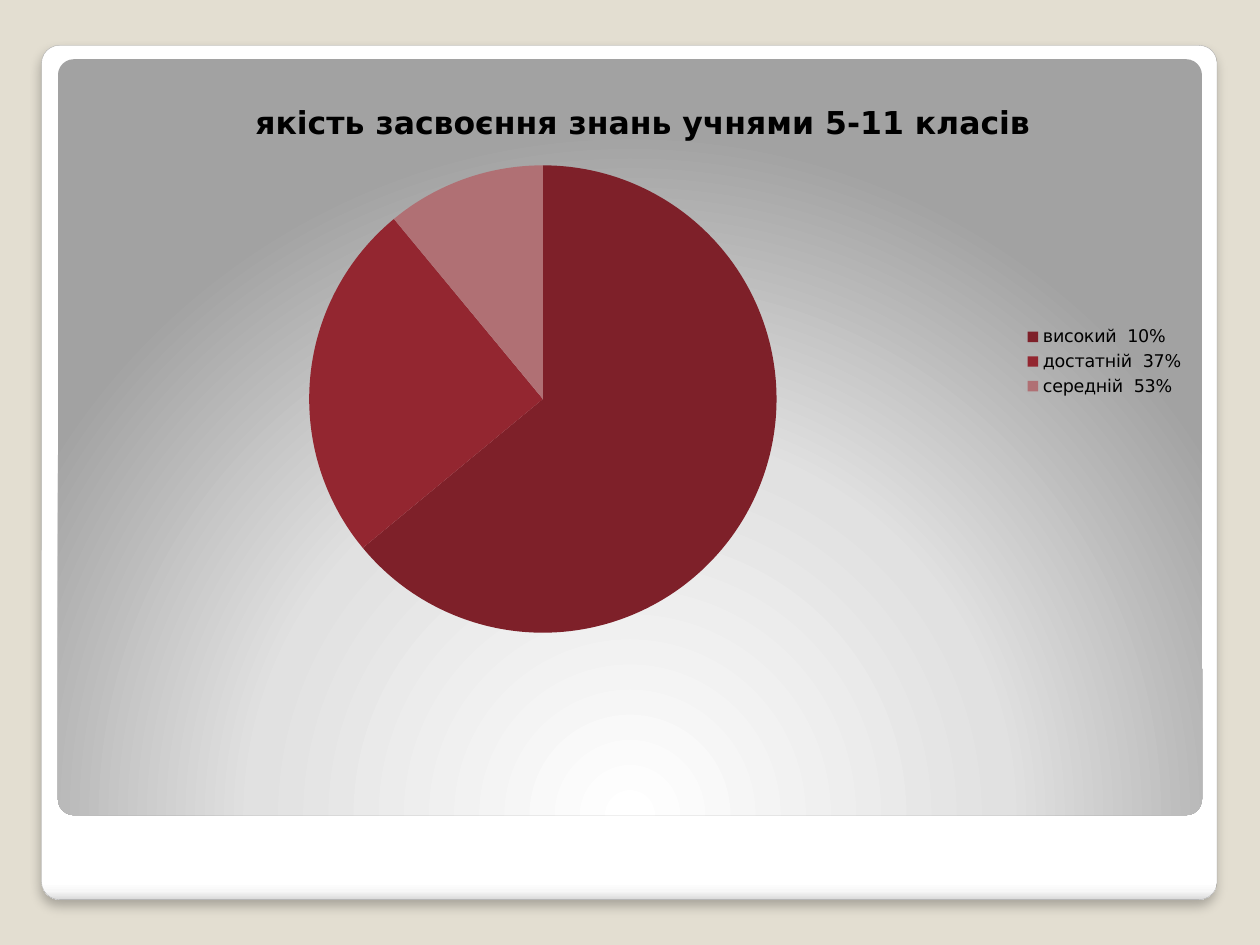
from dataclasses import dataclass

from lxml import etree
from pptx import Presentation
from pptx import util as u
from pptx.chart.data import CategoryChartData
from pptx.dml.color import RGBColor
from pptx.enum import chart as charts
from pptx.enum import shapes
from pptx.oxml import parse_xml
from pptx.oxml.ns import nsdecls, qn


@dataclass(frozen=True)
class Theme:
    font: str = "DejaVu Sans"
    ink: str = "000000"
    background: str = "E3DED1"
    frame_line: str = "A4A4A4"
    slices: tuple = ("7E2029", "932630", "B07074")
    frame_stops: tuple = ((0, "FFFFFF"), (98, "FFFFFF"), (99, "F7F7F7"), (100, "DADADA"))
    panel_stops: tuple = ((0, "FFFFFF"), (55, "E1E1E1"), (100, "A2A2A2"))
    title_size: int = 18
    legend_size: int = 10


LINEAR_DOWN = '<a:lin ang="5400000" scaled="0"/>'
GLOW_FROM_BELOW = (
    '<a:path path="circle">'
    '<a:fillToRect l="50000" t="175000" r="50000" b="-75000"/></a:path>'
)
SOFT_SHADOW = (
    f'<a:effectLst {nsdecls("a")}>'
    f'<a:outerShdw blurRad="{u.Pt(6)}" dist="{u.Pt(4)}" dir="5400000" rotWithShape="0">'
    '<a:srgbClr val="000000"><a:alpha val="25000"/></a:srgbClr>'
    '</a:outerShdw></a:effectLst>'
)


def format_font(font, *, name, size, color, bold=False):
    font.name, font.size, font.bold = name, u.Pt(size), bold
    font.color.rgb = RGBColor.from_string(color)


def write_text(frame, words, **style):
    span = frame.paragraphs[0].add_run()
    span.text = words
    format_font(span.font, **style)


def place(part, **fractions):
    """Fix a chart part at fractions of the chart's size."""
    for old in part.findall(qn("c:layout")):
        part.remove(old)
    layout = etree.Element(qn("c:layout"))
    part.insert(0 if part.find(qn("c:tx")) is None else 1, layout)
    manual = etree.SubElement(layout, qn("c:manualLayout"))
    if "w" in fractions:
        etree.SubElement(manual, qn("c:layoutTarget")).set("val", "inner")
    for mode in ("xMode", "yMode"):
        etree.SubElement(manual, qn(f"c:{mode}")).set("val", "edge")
    for key, value in fractions.items():
        etree.SubElement(manual, qn(f"c:{key}")).set("val", str(value))


class SlideBuilder:
    def __init__(self, page, theme):
        self.page, self.theme = page, theme
        fill = page.background.fill
        fill.solid()
        fill.fore_color.rgb = RGBColor.from_string(theme.background)

    def card(self, left, top, width, height, stops, direction, line=None, shadow=None):
        """Add a rounded card with a gradient fill."""
        box = self.page.shapes.add_shape(
            shapes.MSO_SHAPE.ROUNDED_RECTANGLE,
            *map(u.Inches, (left, top, width, height)))
        box.adjustments[0] = 0.021
        box.shadow.inherit = False
        props = box._element.spPr
        colors = "".join(
            f'<a:gs pos="{pos * 1000}"><a:srgbClr val="{color}"/></a:gs>'
            for pos, color in stops)
        props.find(qn("a:prstGeom")).addnext(parse_xml(
            f'<a:gradFill {nsdecls("a")} rotWithShape="1">'
            f'<a:gsLst>{colors}</a:gsLst>{direction}</a:gradFill>'))
        if line:
            box.line.color.rgb = RGBColor.from_string(line)
            box.line.width = u.Pt(0.16)
        else:
            box.line.fill.background()
        if shadow:
            props.replace(props.find(qn("a:effectLst")), parse_xml(shadow))

    def pie(self, left, top, width, height, title, shares):
        theme = self.theme
        data = CategoryChartData()
        data.categories = list(shares)
        data.add_series(title, list(shares.values()))
        chart = self.page.shapes.add_chart(
            charts.XL_CHART_TYPE.PIE,
            *map(u.Inches, (left, top, width, height)), data).chart
        format_font(chart.font, name=theme.font, size=theme.legend_size, color=theme.ink)

        chart.has_title = True
        write_text(chart.chart_title.text_frame, title, name=theme.font,
                   size=theme.title_size, color=theme.ink, bold=True)
        place(chart.chart_title._element, x=0.16, y=0.04)

        chart.has_legend = True
        chart.legend.position = charts.XL_LEGEND_POSITION.RIGHT
        chart.legend.include_in_layout = False

        plot = chart.plots[0]
        plot.vary_by_categories = True
        for index, color in enumerate(theme.slices):
            fill = plot.series[0].points[index].format.fill
            fill.solid()
            fill.fore_color.rgb = RGBColor.from_string(color)
        plot_area = chart._chartSpace.find(f'{qn("c:chart")}/{qn("c:plotArea")}')
        place(plot_area, x=0.21, y=0.16, w=0.42, h=0.81)


def main():
    theme = Theme()
    deck = Presentation()
    deck.slide_width, deck.slide_height = u.Inches(10), u.Inches(7.5)
    slide = SlideBuilder(deck.slides.add_slide(deck.slide_layouts[6]), theme)
    slide.card(0.33, 0.36, 9.33, 6.78, theme.frame_stops, LINEAR_DOWN,
               line=theme.frame_line, shadow=SOFT_SHADOW)
    slide.card(0.46, 0.47, 9.08, 6, theme.panel_stops, GLOW_FROM_BELOW)
    slide.pie(0.55, 0.58, 8.95, 4.58, "якість засвоєння знань учнями 5-11 класів",
              {"високий  10%": 64, "достатній  37%": 25, "середній  53%": 11})
    deck.save("out.pptx")


if __name__ == "__main__":
    main()
